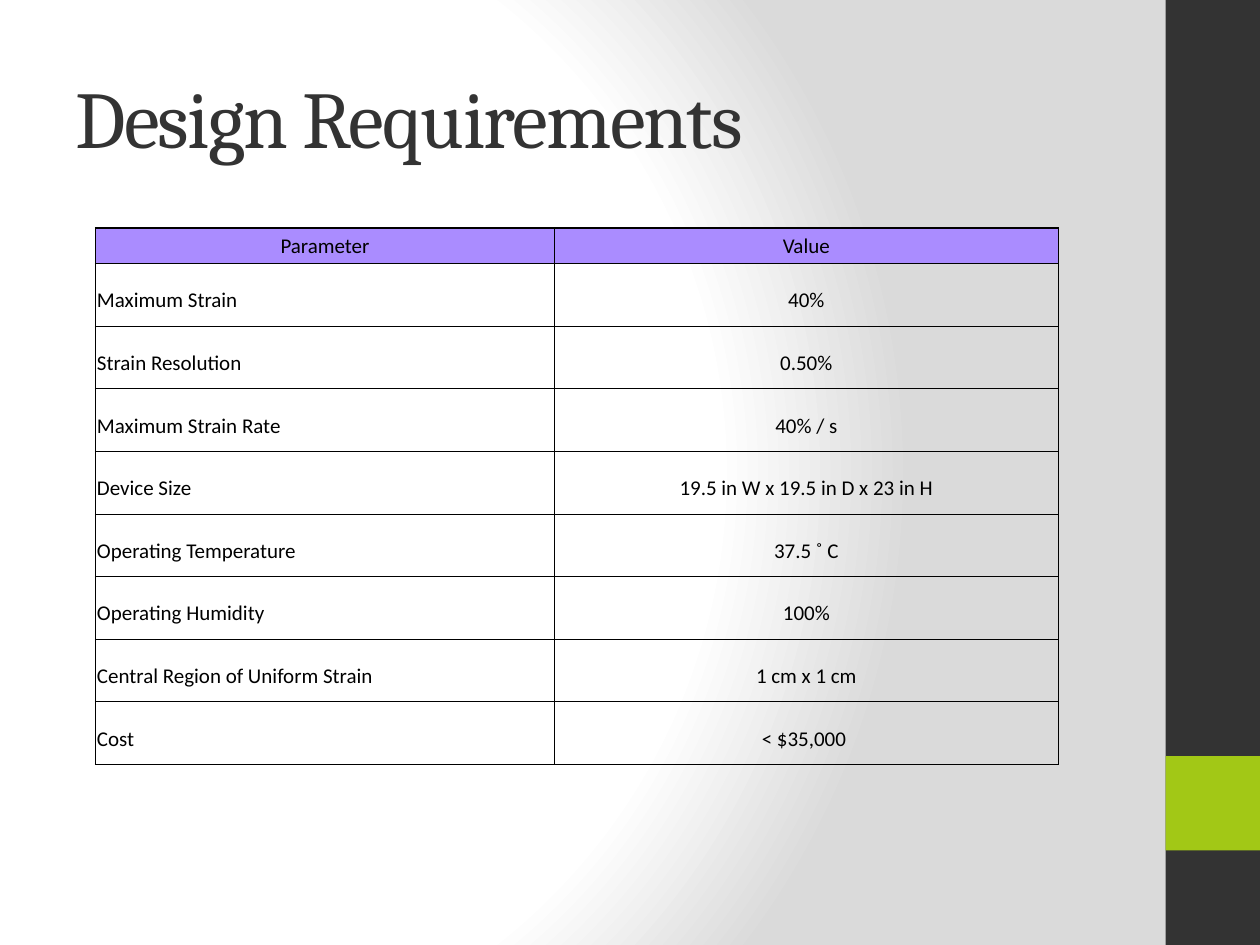
from pptx import Presentation
from pptx.dml.color import RGBColor
from pptx.enum.shapes import MSO_SHAPE
from pptx.enum.text import MSO_ANCHOR, MSO_AUTO_SIZE, PP_ALIGN
from pptx.oxml import parse_xml
from pptx.oxml.ns import nsdecls
from pptx.util import Inches, Pt

COLORS = {
    "dark": "333333",
    "accent": "A2C816",
    "header": "AA8CFF",
    "ink": "000000",
    "white": "FFFFFF",
    "grey": "DADADA",
}
REQUIREMENTS = [
    ("Parameter", "Value"),
    ("Maximum Strain", "40%"),
    ("Strain Resolution", "0.50%"),
    ("Maximum Strain Rate", "40% / s"),
    ("Device Size", "19.5 in W x 19.5 in D x 23 in H"),
    ("Operating Temperature", "37.5 ˚ C"),
    ("Operating Humidity", "100%"),
    ("Central Region of Uniform Strain", "1 cm x 1 cm"),
    ("Cost", "< $35,000 "),
]


def color(name):
    return RGBColor.from_string(COLORS[name])


def style_span(span, font, size, ink):
    span.font.name = font
    span.font.size = Pt(size)
    span.font.color.rgb = color(ink)


def paint_background(page):
    page.background.fill.gradient()
    stops = "".join(
        f'<a:gs pos="{percent * 1000}"><a:srgbClr val="{COLORS[name]}"/></a:gs>'
        for percent, name in [(0, "white"), (75, "white"), (100, "grey")]
    )
    gradient = parse_xml(
        f'<a:gradFill {nsdecls("a")} rotWithShape="1"><a:gsLst>{stops}</a:gsLst>'
        '<a:path path="circle">'
        '<a:fillToRect l="20000" t="50000" r="100000" b="50000"/>'
        "</a:path></a:gradFill>"
    )
    properties = page.background._cSld.bg.bgPr
    properties.replace(properties[0], gradient)


def add_block(page, left, top, width, height, fill):
    block = page.shapes.add_shape(
        MSO_SHAPE.RECTANGLE, Inches(left), Inches(top), Inches(width), Inches(height)
    )
    block.shadow.inherit = False
    block.fill.solid()
    block.fill.fore_color.rgb = color(fill)
    block.line.fill.background()


def add_sidebar(page, left, top, width, height):
    add_block(page, left, top, width, height, "dark")
    add_block(page, left, top + 6, width, width, "accent")


def place_title(page, left, top, width, height):
    title = page.shapes.title
    title.left, title.top = Inches(left), Inches(top)
    title.width, title.height = Inches(width), Inches(height)
    frame = title.text_frame
    frame.text = "Design Requirements"
    frame.auto_size = MSO_AUTO_SIZE.NONE
    frame.vertical_anchor = MSO_ANCHOR.MIDDLE
    para = frame.paragraphs[0]
    para.alignment = PP_ALIGN.LEFT
    span = para.runs[0]
    style_span(span, "Cambria", 46, "dark")
    span.font._element.set("spc", "-100")


def set_borders(cell, widths):
    properties = cell._tc.get_or_add_tcPr()
    for position, (side, width) in enumerate(widths.items()):
        border = parse_xml(
            f'<a:ln{side} {nsdecls("a")} w="{Pt(width)}"><a:solidFill>'
            f'<a:srgbClr val="{COLORS["ink"]}"/></a:solidFill></a:ln{side}>'
        )
        properties.insert(position, border)


def fill_cell(cell, text, is_header, is_centered):
    cell.text = text
    cell.margin_left = cell.margin_right = Inches(0.01)
    cell.margin_top = Inches(0.01 if is_header else 0.1)
    cell.margin_bottom = Inches(0 if is_header else 0.1)
    cell.vertical_anchor = MSO_ANCHOR.MIDDLE if is_header else MSO_ANCHOR.BOTTOM
    para = cell.text_frame.paragraphs[0]
    para.alignment = PP_ALIGN.CENTER if is_centered else PP_ALIGN.LEFT
    style_span(para.runs[0], "Calibri", 12, "ink")
    if is_header:
        cell.fill.solid()
        cell.fill.fore_color.rgb = color("header")
    else:
        cell.fill.background()


def add_requirements(page, left, top, width, height):
    last = len(REQUIREMENTS) - 1
    table = page.shapes.add_table(
        len(REQUIREMENTS), 2, Inches(left), Inches(top), Inches(width), Inches(height)
    ).table
    table.first_row = table.horz_banding = False
    table.columns[0].width = Inches(3.64)
    table.columns[1].width = Inches(width - 3.64)
    for row, texts in enumerate(REQUIREMENTS):
        is_header = row == 0
        table.rows[row].height = Inches(0.28 if is_header else (height - 0.28) / last)
        for column, text in enumerate(texts):
            cell = table.cell(row, column)
            fill_cell(cell, text, is_header, is_header or column == 1)
            set_borders(cell, {
                "L": 1 if column == 0 else 0.5,
                "R": 1 if column == 1 else 0.5,
                "T": 1 if is_header else 0.5,
                "B": 1 if row == last else 0.5,
            })


def main():
    deck = Presentation()
    deck.slide_width, deck.slide_height = Inches(10), Inches(7.5)
    page = deck.slides.add_slide(deck.slide_layouts[5])
    paint_background(page)
    add_sidebar(page, 9.25, 0, 0.75, 7.5)
    place_title(page, 0.5, 0.3, 8.33, 1.25)
    add_requirements(page, 0.76, 1.81, 7.64, 4.26)
    deck.save("out.pptx")


if __name__ == "__main__":
    main()
